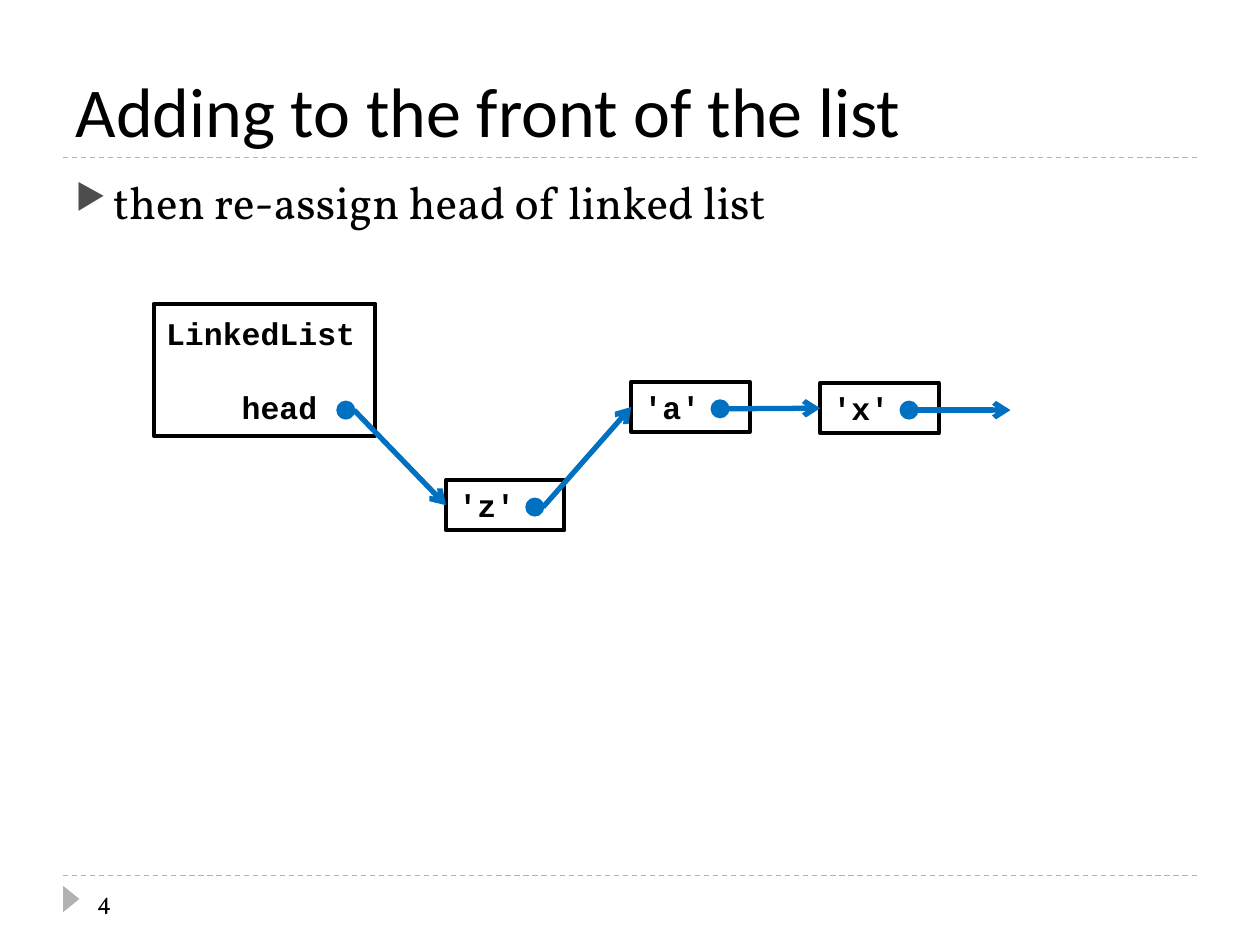
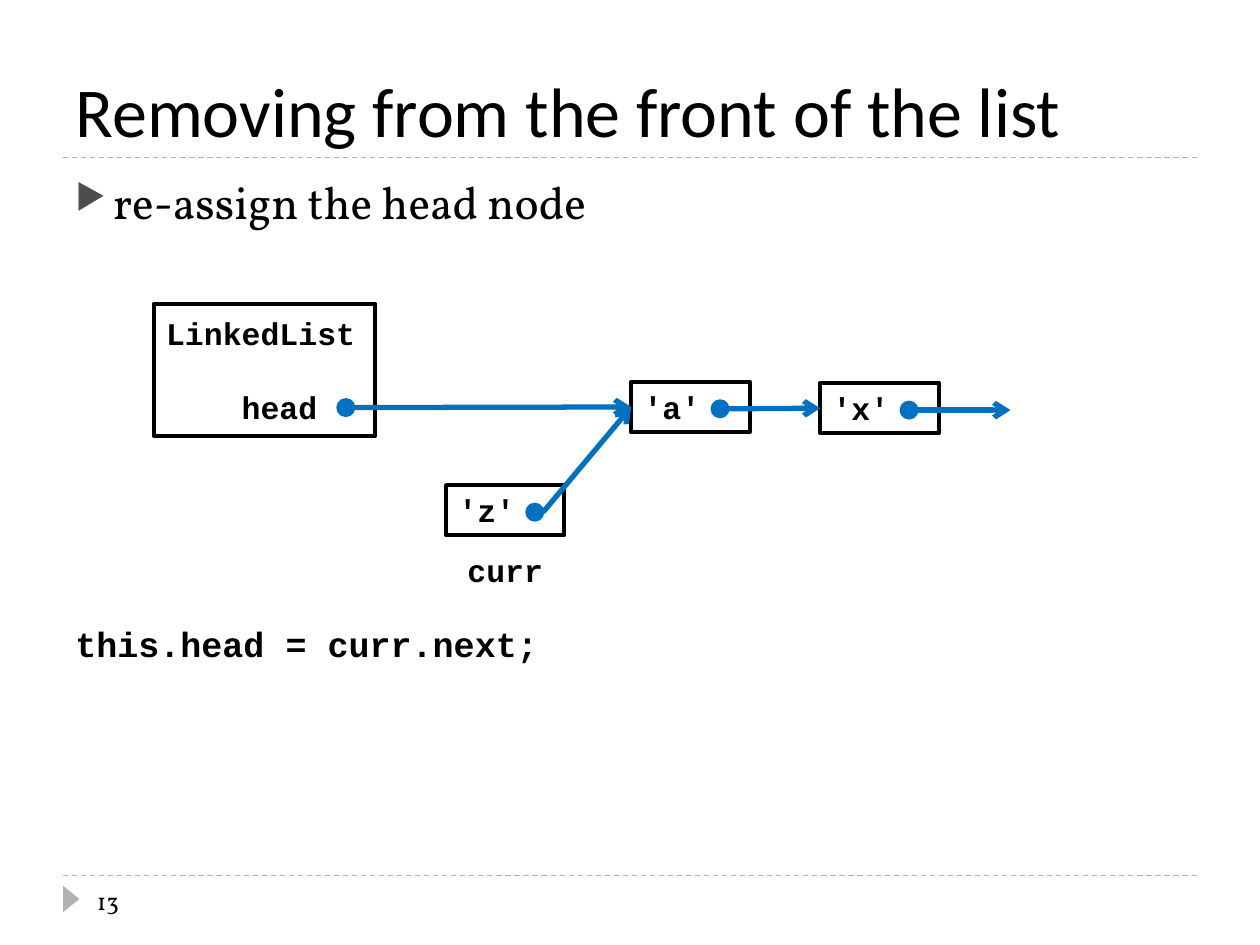
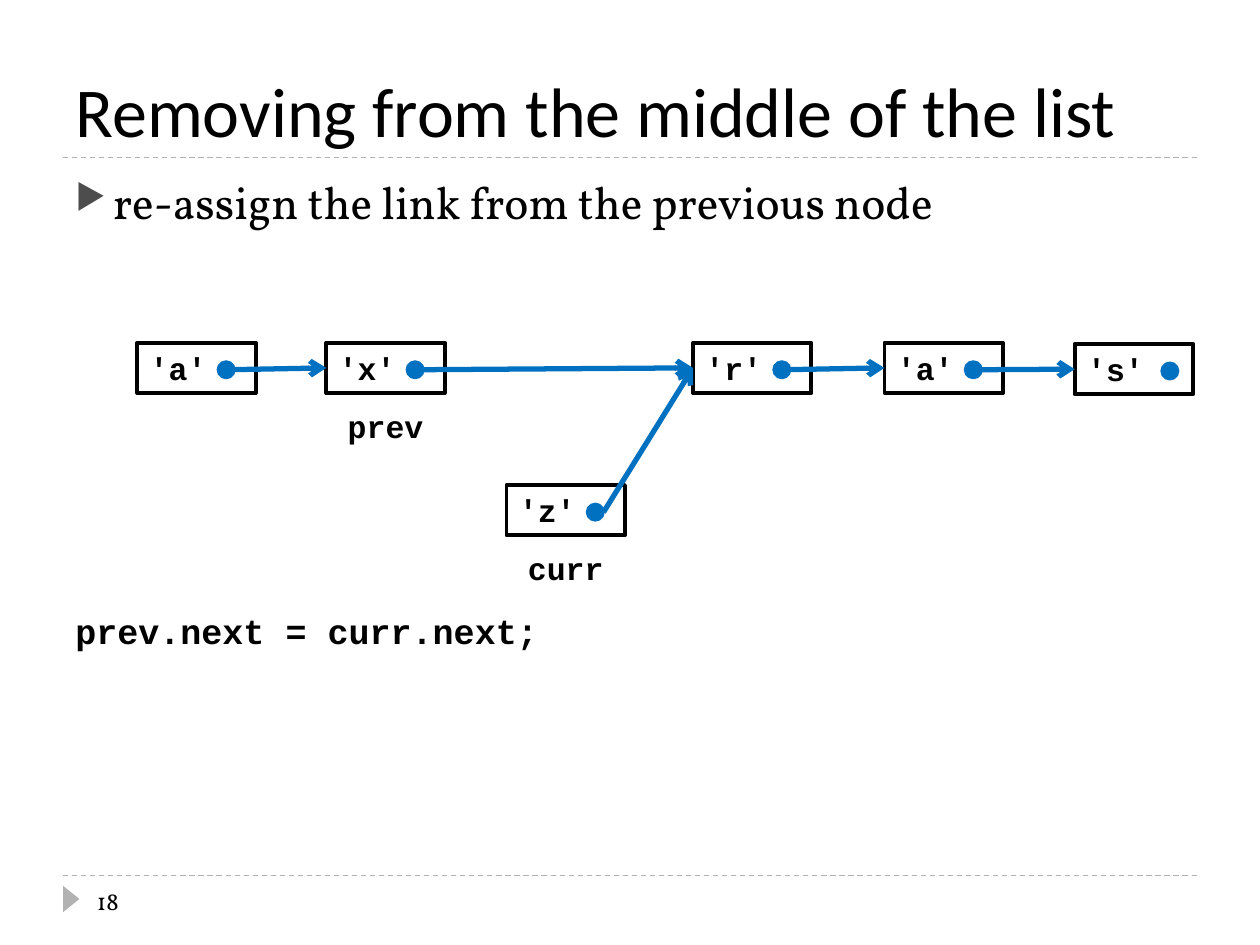
from lxml.etree import SubElement
from pptx import Presentation
from pptx.dml.color import RGBColor
from pptx.enum.dml import MSO_LINE
from pptx.enum.shapes import MSO_CONNECTOR, MSO_SHAPE
from pptx.enum.text import MSO_ANCHOR, PP_ALIGN
from pptx.oxml.ns import qn
from pptx.util import Inches, Pt

COLORS = {"text": "000000", "link": "0070C0", "rule": "B2B2B2", "bullet": "4D4D4D"}
TITLE_FONT, BODY_FONT, CODE_FONT = "Calibri", "Vollkorn", "Courier New"
COLS, ROWS = 100, 75
NODE_W, NODE_H, DOT = 9.4, 4, 1.3
LEFT_SIDE = 1


def rgb(name):
    return RGBColor.from_string(COLORS[name])


def write(tf, text, size=18, font=CODE_FONT, bold=True, align=PP_ALIGN.LEFT,
          anchor=MSO_ANCHOR.MIDDLE, before=0, indent=0, bullet=None, more=False):
    tf.word_wrap = True
    tf.vertical_anchor = anchor
    p = tf.add_paragraph() if more else tf.paragraphs[0]
    p.alignment = align
    p.space_before = Pt(before)
    r = p.add_run()
    r.text = text
    r.font.size, r.font.name, r.font.bold = Pt(size), font, bold
    r.font.color.rgb = rgb("text")
    pPr = p._p.get_or_add_pPr()
    if indent:
        pPr.set("marL", str(Inches(indent)))
    if bullet:
        pPr.set("indent", str(-Inches(indent)))
        SubElement(SubElement(pPr, qn("a:buClr")), qn("a:srgbClr"), val=COLORS["bullet"])
        SubElement(pPr, qn("a:buSzPct"), val="76000")
        SubElement(pPr, qn("a:buChar"), char=bullet)


class Deck:
    def __init__(self):
        self.prs = Presentation()
        self.prs.slide_width, self.prs.slide_height = Inches(10), Inches(7.5)
        self.s = None

    def x(self, cols):
        return round(self.prs.slide_width * cols / COLS)

    def y(self, rows):
        return round(self.prs.slide_height * rows / ROWS)

    def area(self, x, y, w, h):
        return self.x(x), self.y(y), self.x(w), self.y(h)

    def slide(self, title, point, number):
        self.s = self.prs.slides.add_slide(self.prs.slide_layouts[5])
        for row in (69.5, 12.5):
            self.line((5, row), (95, row), "rule", 0.75).line.dash_style = MSO_LINE.DASH
        self.shape(MSO_SHAPE.ISOSCELES_TRIANGLE, 4.6, 70.7, 2.1, 1.3, fill="rule").rotation = 90
        sp = self.s.shapes.title
        sp.left, sp.top, sp.width, sp.height = self.area(5, 1.7, 90, 10.8)
        write(sp.text_frame, title, size=40, font=TITLE_FONT, bold=False,
              anchor=MSO_ANCHOR.BOTTOM)
        self.text(point, 5, 13.3, 90, 6, size=26, font=BODY_FONT, bold=False,
                  anchor=MSO_ANCHOR.TOP, before=6, indent=0.3, bullet="▶")
        self.text(number, 6.7, 69.5, 21.7, 4, size=14, font=BODY_FONT, bold=False)

    def text(self, text, x, y, w, h, **fmt):
        write(self.s.shapes.add_textbox(*self.area(x, y, w, h)).text_frame, text, **fmt)

    def label(self, text, x, y):
        self.text(text, x, y, NODE_W, NODE_H, align=PP_ALIGN.CENTER)

    def code(self, text, y):
        self.text(text, 5, y, 90, 4.2, size=20, anchor=MSO_ANCHOR.TOP)

    def shape(self, kind, x, y, w, h, fill=None, line=None, width=0):
        sp = self.s.shapes.add_shape(kind, *self.area(x, y, w, h))
        sp.shadow.inherit = False
        if fill:
            sp.fill.solid()
            sp.fill.fore_color.rgb = rgb(fill)
        else:
            sp.fill.background()
        if line:
            sp.line.color.rgb = rgb(line)
            sp.line.width = Pt(width)
        else:
            sp.line.fill.background()
        return sp

    def box(self, x, y, w, h):
        return self.shape(MSO_SHAPE.RECTANGLE, x, y, w, h, line="text", width=2.25)

    def dot(self, x, y):
        self.shape(MSO_SHAPE.OVAL, x, y, DOT, DOT, fill="link", line="link", width=1.5)
        return x + DOT / 2, y + DOT / 2

    def node(self, text, x, y, dot_x=6.4):
        sp = self.box(x, y, NODE_W, NODE_H)
        write(sp.text_frame, text)
        return sp, self.dot(x + dot_x, y + 1.5)

    def linked_list(self, dot_y):
        tf = self.box(12.2, 24.1, 17.6, 10.5).text_frame
        write(tf, "LinkedList")
        write(tf, "head", before=20.4, indent=0.6, more=True)
        return self.dot(26.8, dot_y)

    def line(self, start, end, color, width):
        c = self.s.shapes.add_connector(MSO_CONNECTOR.STRAIGHT, self.x(start[0]),
                                        self.y(start[1]), self.x(end[0]), self.y(end[1]))
        c.line.color.rgb = rgb(color)
        c.line.width = Pt(width)
        SubElement(c._element.spPr, qn("a:effectLst"))
        return c

    def link(self, start, target=None, end=None, from_edge=False):
        if from_edge:
            start = start[0] + DOT / 2, start[1]
        c = self.line(start, end or start, "link", 3)
        if target is not None:
            c.end_connect(target, LEFT_SIDE)
        SubElement(c.line._get_or_add_ln(), qn("a:tailEnd"), type="arrow")

    def front_list(self, head_y, z_y):
        head = self.linked_list(head_y)
        a, a_dot = self.node("'a'", 50.1, 30.3)
        x, x_dot = self.node("'x'", 65.1, 30.4)
        z, z_dot = self.node("'z'", 35.4, z_y)
        self.link(a_dot, x)
        self.link(x_dot, end=(80.2, x_dot[1]))
        self.link(z_dot, a, from_edge=True)
        return head, a, z


def main():
    d = Deck()

    d.slide("Adding to the front of the list", "then re-assign head of linked list", "4")
    head, a, z = d.front_list(31.9, 38.1)
    d.link(head, z, from_edge=True)

    d.slide("Removing from the front of the list", "re-assign the head node", "13")
    head, a, z = d.front_list(31.7, 38.5)
    d.link(head, a, from_edge=True)
    d.label("curr", 35.4, 43.2)
    d.code("this.head = curr.next;", 48.9)

    d.slide("Removing from the middle of the list",
            "re-assign the link from the previous node", "18")
    a, a_dot = d.node("'a'", 10.9, 27.2)
    x, x_dot = d.node("'x'", 25.9, 27.2)
    r, r_dot = d.node("'r'", 55, 27.2)
    a2, a2_dot = d.node("'a'", 70.2, 27.2)
    last, last_dot = d.node("'s'", 85.3, 27.3, dot_x=6.9)
    z, z_dot = d.node("'z'", 40.2, 38.5)
    for start, target in ((a_dot, x), (x_dot, r), (r_dot, a2), (a2_dot, last)):
        d.link(start, target)
    d.link(z_dot, r, from_edge=True)
    d.label("curr", 40.2, 43.1)
    d.label("prev", 25.9, 31.8)
    d.code("prev.next = curr.next;", 47.9)

    d.prs.save("out.pptx")


if __name__ == "__main__":
    main()
